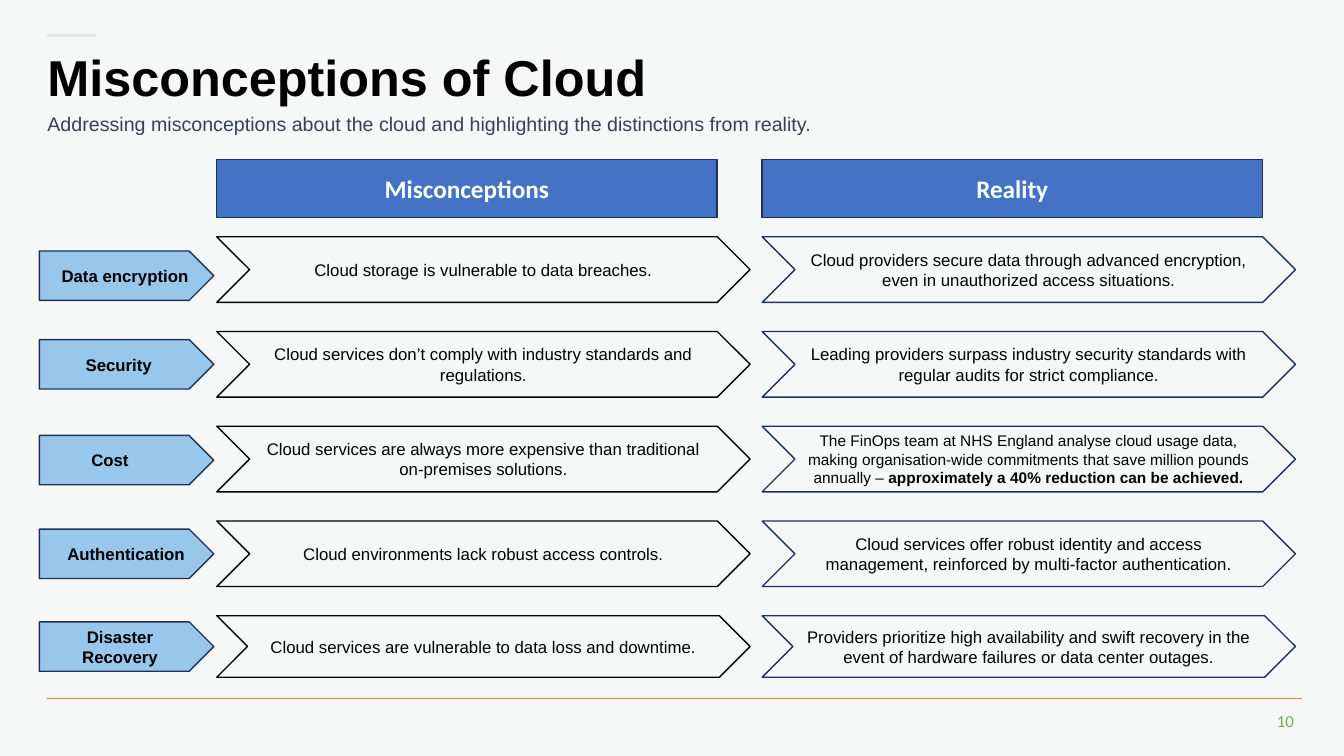
"""Build the slide on cloud misconceptions and the facts behind them."""
from dataclasses import dataclass

from lxml import etree
from pptx import Presentation
from pptx import util as u
from pptx.dml.color import RGBColor
from pptx.enum import shapes, text
from pptx.oxml import ns

HUES = {
    "page": "F6F8F8", "black": "000000", "white": "FFFFFF", "slate": "374151",
    "navy": "1E3256", "blue": "4472C4", "sky": "99C7EB", "grey": "E7E6E6",
    "orange": "ED7D31", "green": "70AD47",
}
WIDE, HIGH = u.Inches(13.33), u.Inches(7.5)
MYTH, FACT, PLATE = 16.13, 56.71, 2.93
TOP, PITCH = 31.33, 12.53
LEFT, MID, RIGHT = text.PP_ALIGN.LEFT, text.PP_ALIGN.CENTER, text.PP_ALIGN.RIGHT
KIND = shapes.MSO_SHAPE

HEAD = {"name": "Calibri", "size": u.Pt(18), "bold": True, "color": "white"}
BODY = {"name": "Arial", "size": u.Pt(12), "bold": False, "color": "black"}
SMALL = BODY | {"size": u.Pt(11)}
LABEL = BODY | {"bold": True}
TITLE = LABEL | {"size": u.Pt(36)}
LEAD = BODY | {"size": u.Pt(14), "color": "slate"}
FOLIO = BODY | {"name": "Calibri", "color": "green"}


@dataclass
class Box:
    """A place on the slide, in percent of its width and height."""
    x: float
    y: float
    w: float
    h: float

    def spot(self) -> tuple[int, ...]:
        """Turn the shares into slide lengths."""
        return tuple(round(part * side / 100) for part, side in
                     zip((self.x, self.y, self.w, self.h), (WIDE, HIGH) * 2))


@dataclass
class Topic:
    """One row: its label, the false belief and the fact."""
    name: str
    myth: str
    fact: str
    plate: float
    left: float
    align: int = MID
    tall: float = 8.67
    style: dict | None = None
    stress: str = ""


TOPICS = [
    Topic("Data encryption", "Cloud storage is vulnerable to data breaches.",
          "Cloud providers secure data through advanced encryption, "
          "even in unauthorized access situations.", 33.2, 3.15),
    Topic("Security",
          "Cloud services don’t comply with industry standards and regulations.",
          "Leading providers surpass industry security standards with "
          "regular audits for strict compliance.", 44.93, 5.63, LEFT),
    Topic("Cost",
          "Cloud services are always more expensive than traditional "
          "on-premises solutions.",
          "The FinOps team at NHS England analyse cloud usage data, making "
          "organisation-wide commitments that save million pounds annually – ",
          57.6, 2.03, style=SMALL,
          stress="approximately a 40% reduction can be achieved."),
    Topic("Authentication", "Cloud environments lack robust access controls.",
          "Cloud services offer robust identity and access management, "
          "reinforced by multi-factor authentication.", 70, 3.23),
    Topic("Disaster Recovery",
          "Cloud services are vulnerable to data loss and downtime.",
          "Providers prioritize high availability and swift recovery in the "
          "event of hardware failures or data center outages.",
          82.27, 2.78, tall=8.13),
]


def tint(hue: str) -> RGBColor:
    """Look up a colour by name."""
    return RGBColor.from_string(HUES[hue])


def add_run(para, words: str, style: dict) -> None:
    """Add a run and set its font from the style."""
    run = para.add_run()
    run.text = words
    for key, value in style.items():
        if key == "color":
            run.font.color.rgb = tint(value)
        else:
            setattr(run.font, key, value)


def write(shape, words: str, style: dict, align: int = MID):
    """Put a first line of text in a shape and return its paragraph."""
    frame = shape.text_frame
    frame.word_wrap = True
    frame.vertical_anchor = text.MSO_ANCHOR.MIDDLE
    para = frame.paragraphs[0]
    para.alignment = align
    add_run(para, words, style)
    return para


def add_form(slide, kind: int, box: Box, edge: str, fill: str = ""):
    """Draw an outlined shape, filled if a colour is given."""
    form = slide.shapes.add_shape(kind, *box.spot())
    form.shadow.inherit = False
    form.line.color.rgb = tint(edge)
    form.line.width = u.Pt(1)
    if fill:
        form.fill.solid()
        form.fill.fore_color.rgb = tint(fill)
    else:
        form.fill.background()
    return form


def add_text(slide, box: Box, words: str, style: dict, align: int):
    """Add a text box and return it."""
    note = slide.shapes.add_textbox(*box.spot())
    write(note, words, style, align)
    return note


def add_rule(slide, start: float, end: float, y: float, hue: str, thick: float) -> None:
    """Draw a level line."""
    left, top, width, _ = Box(start, y, end - start, 0).spot()
    rule = slide.shapes.add_connector(
        shapes.MSO_CONNECTOR.STRAIGHT, left, top, left + width, top)
    rule.line.color.rgb = tint(hue)
    rule.line.width = u.Pt(thick)
    etree.SubElement(rule._element.spPr, ns.qn("a:effectLst"))


def add_title(slide) -> None:
    """Write the title and the line below it."""
    note = add_text(slide, Box(3.53, 5.73, 93.62, 12.67),
                    "Misconceptions of Cloud", TITLE, LEFT)
    frame = note.text_frame
    for side in ("left", "right", "top", "bottom"):
        setattr(frame, f"margin_{side}", 0)
    frame.paragraphs[0].space_after = u.Pt(6)
    lead = frame.add_paragraph()
    lead.line_spacing = 0.9
    add_run(lead, "Addressing misconceptions about the cloud and highlighting "
            "the distinctions from reality.", LEAD)


def add_topic(slide, row: int, topic: Topic) -> None:
    """Draw the label and both chevrons of one row."""
    y = TOP + row * PITCH
    myth, fact = (add_form(slide, KIND.CHEVRON, Box(x, y, 39.68, topic.tall), edge)
                  for x, edge in ((MYTH, "black"), (FACT, "navy")))
    style = topic.style or BODY
    write(myth, topic.myth, BODY)
    para = write(fact, topic.fact, style)
    if topic.stress:
        add_run(para, topic.stress, style | {"bold": True})
    add_form(slide, KIND.PENTAGON, Box(PLATE, topic.plate, 12.98, 6.53), "navy", "sky")
    add_text(slide, Box(topic.left, topic.plate, 12.3, 6.53),
             topic.name, LABEL, topic.align)


def main() -> None:
    """Make the deck and save it."""
    deck = Presentation()
    deck.slide_width, deck.slide_height = WIDE, HIGH
    slide = deck.slides.add_slide(deck.slide_layouts[6])
    slide.background.fill.solid()
    slide.background.fill.fore_color.rgb = tint("page")
    add_rule(slide, 3.53, 7.13, 4.67, "grey", 2)
    add_rule(slide, 3.53, 96.85, 92.4, "orange", 0.5)
    add_text(slide, Box(93.92, 93.33, 3.08, 4), "10", FOLIO, RIGHT)
    add_title(slide)
    for x, words in ((MYTH, "Misconceptions"), (FACT, "Reality")):
        head = add_form(slide, KIND.RECTANGLE, Box(x, 21.07, 37.21, 7.73), "navy", "blue")
        write(head, words, HEAD)
    for row, topic in enumerate(TOPICS):
        add_topic(slide, row, topic)
    deck.save("out.pptx")


if __name__ == "__main__":
    main()
